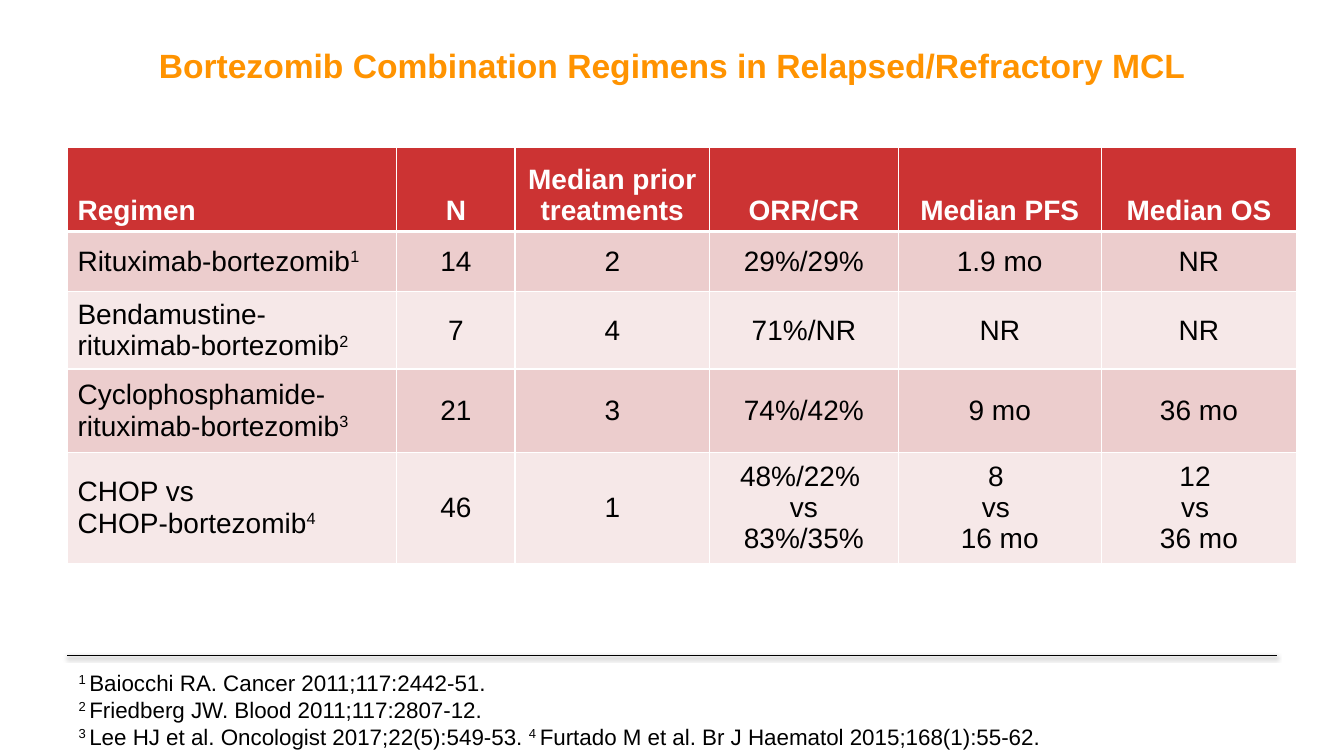
from lxml import etree
from pptx import Presentation
from pptx import util as u
from pptx.dml.color import RGBColor
from pptx.enum import shapes, text
from pptx.oxml.ns import qn

COLORS = {
    "title": "FF9300",
    "header": "CC3333",
    "band_dark": "ECCDCD",
    "band_light": "F6E8E8",
    "grid": "FFFFFF",
    "ink": "000000",
}
FONT = "Arial"
LEFT, CENTER = text.PP_ALIGN.LEFT, text.PP_ALIGN.CENTER

TITLE = "Bortezomib Combination Regimens in Relapsed/Refractory MCL"
# A pair of ^ encloses superscript text; a line break starts a new paragraph.
REGIMENS = [
    ["Regimen", "N", "Median prior treatments", "ORR/CR", "Median PFS", "Median OS"],
    ["Rituximab-bortezomib^1^", "14", "2", "29%/29%", "1.9 mo", "NR"],
    ["Bendamustine-rituximab-bortezomib^2^", "7", "4", "71%/NR", "NR", "NR"],
    ["Cyclophosphamide-rituximab-bortezomib^3^", "21", "3", "74%/42%", "9 mo", "36 mo"],
    ["CHOP vs\nCHOP-bortezomib^4^", "46", "1", "48%/22% \nvs\n83%/35%",
     "8 \nvs \n16 mo", "12 \nvs \n36 mo"],
]
COLUMN_WIDTHS = [8.3, 2.98, 4.9, 4.76, 5.11, 4.93]
ROW_HEIGHTS = [2.12, 1.52, 1.94, 2.1, 2.62]
REFERENCES = (
    "^1 ^Baiocchi RA. Cancer 2011;117:2442-51.\n"
    "^2 ^Friedberg JW. Blood 2011;117:2807-12.\n"
    "^3 ^Lee HJ et al. Oncologist 2017;22(5):549-53. "
    "^4 ^Furtado M et al. Br J Haematol 2015;168(1):55-62."
)


def rgb(name):
    return RGBColor.from_string(COLORS[name])


def write(frame, content, size, color, align=LEFT, bold=False):
    """Fill a text frame, reading ^ as the superscript switch."""
    frame.word_wrap = True
    for number, line in enumerate(content.split("\n")):
        paragraph = frame.paragraphs[0] if number == 0 else frame.add_paragraph()
        paragraph.alignment = align
        for position, piece in enumerate(line.split("^")):
            if not piece:
                continue
            run = paragraph.add_run()
            run.text = piece
            run.font.name = FONT
            run.font.size = u.Pt(size)
            run.font.bold = bold
            run.font.color.rgb = rgb(color)
            if position % 2:
                run._r.get_or_add_rPr().set("baseline", "30000")


def add_text(slide, left, top, width, height, content, margins=True, **style):
    box = slide.shapes.add_textbox(u.Cm(left), u.Cm(top), u.Cm(width), u.Cm(height))
    frame = box.text_frame
    if not margins:
        frame.margin_left = frame.margin_right = 0
        frame.margin_top = frame.margin_bottom = 0
    write(frame, content, **style)


def add_borders(cell, top, bottom):
    """Draw white cell borders; top and bottom are widths in points."""
    properties = cell._tc.get_or_add_tcPr()
    for side, width in (("L", 1), ("R", 1), ("T", top), ("B", bottom)):
        border = etree.SubElement(properties, qn(f"a:ln{side}"), w=str(u.Pt(width)))
        fill = etree.SubElement(border, qn("a:solidFill"))
        etree.SubElement(fill, qn("a:srgbClr"), val=COLORS["grid"])


def add_regimen_table(slide):
    frame = slide.shapes.add_table(
        len(REGIMENS), len(COLUMN_WIDTHS), u.Cm(1.7), u.Cm(3.71),
        u.Cm(sum(COLUMN_WIDTHS)), u.Cm(sum(ROW_HEIGHTS)))
    table = frame.table
    for column, width in zip(table.columns, COLUMN_WIDTHS):
        column.width = u.Cm(width)
    for row, height in zip(table.rows, ROW_HEIGHTS):
        row.height = u.Cm(height)

    for r, regimen in enumerate(REGIMENS):
        is_header = r == 0
        band = "header" if is_header else "band_dark" if r % 2 else "band_light"
        for c, value in enumerate(regimen):
            cell = table.cell(r, c)
            add_borders(cell, top=3 if r == 1 else 1, bottom=3 if is_header else 1)
            cell.fill.solid()
            cell.fill.fore_color.rgb = rgb(band)
            cell.vertical_anchor = (
                text.MSO_ANCHOR.BOTTOM if is_header else text.MSO_ANCHOR.MIDDLE)
            write(cell.text_frame, value, 20, "grid" if is_header else "ink",
                  CENTER if c else LEFT, is_header)


def add_footer_rule(slide):
    """Draw the thin line with a soft shadow above the references."""
    rule = slide.shapes.add_connector(
        shapes.MSO_CONNECTOR.STRAIGHT, u.Cm(1.7), u.Cm(16.51), u.Cm(32.18), u.Cm(16.51))
    rule.line.color.rgb = rgb("ink")
    rule.line.width = u.Pt(0.5)
    effects = etree.SubElement(rule._element.spPr, qn("a:effectLst"))
    shadow = etree.SubElement(
        effects, qn("a:outerShdw"), blurRad=str(u.Pt(3.1)), dist=str(u.Pt(1.6)),
        dir="5400000", rotWithShape="0")
    shade = etree.SubElement(shadow, qn("a:srgbClr"), val=COLORS["ink"])
    etree.SubElement(shade, qn("a:alpha"), val="38000")


def main():
    deck = Presentation()
    deck.slide_width, deck.slide_height = u.Cm(33.87), u.Cm(19.05)
    slide = deck.slides.add_slide(deck.slide_layouts[6])
    add_footer_rule(slide)
    add_text(slide, 1.7, 1.13, 30.48, 2.06, TITLE, margins=False,
             size=24, color="title", align=CENTER, bold=True)
    add_regimen_table(slide)
    add_text(slide, 1.73, 16.74, 29.34, 2.31, REFERENCES, size=16, color="ink")
    deck.save("out.pptx")


if __name__ == "__main__":
    main()
